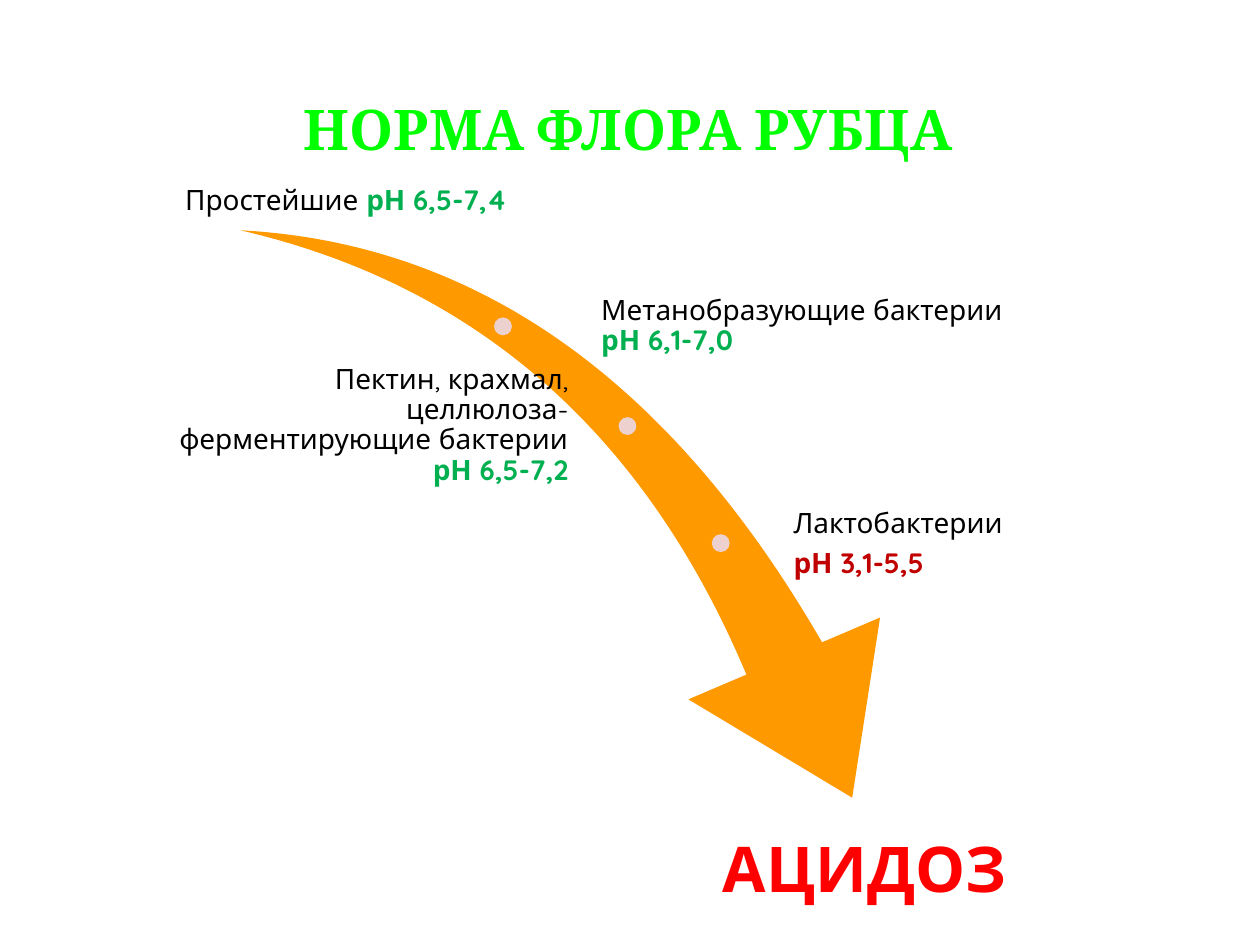
import pptx
import pptx.util
import pptx.dml.color
import pptx.enum.shapes
import pptx.enum.text

Cm = pptx.util.Cm
Pt = pptx.util.Pt
RGBColor = pptx.dml.color.RGBColor
SHAPE = pptx.enum.shapes.MSO_SHAPE
ALIGN = pptx.enum.text.PP_ALIGN
ANCHOR = pptx.enum.text.MSO_ANCHOR

LIME = RGBColor(0x00, 0xFF, 0x00)
ORANGE = RGBColor(0xFF, 0x99, 0x00)
PINK = RGBColor(0xED, 0xD1, 0xCF)
BLACK = RGBColor(0x00, 0x00, 0x00)
GREEN = RGBColor(0x00, 0xB0, 0x50)
DARK_RED = RGBColor(0xC0, 0x00, 0x00)
RED = RGBColor(0xFF, 0x00, 0x00)


class SlideBuilder:
    title_font = "Cambria"
    body_font = "Quicksand"
    label_size = 16
    inset = Cm(0.05)

    def __init__(self, presentation):
        self.slide = presentation.slides.add_slide(presentation.slide_layouts[5])

    def format_run(self, run, font, size, color, bold):
        run.font.name = font
        run.font.size = Pt(size)
        run.font.color.rgb = color
        run.font.bold = bold

    def title(self, text, left, top, width, height):
        heading = self.slide.shapes.title
        heading.left, heading.top = Cm(left), Cm(top)
        heading.width, heading.height = Cm(width), Cm(height)
        frame = heading.text_frame
        frame.text = text
        frame.vertical_anchor = ANCHOR.MIDDLE
        frame.paragraphs[0].alignment = ALIGN.CENTER
        self.format_run(frame.paragraphs[0].runs[0], self.title_font, 32, LIME, True)

    def shape(self, kind, left, top, width, height, color):
        figure = self.slide.shapes.add_shape(
            kind, Cm(left), Cm(top), Cm(width), Cm(height))
        figure.shadow.inherit = False
        figure.fill.solid()
        figure.fill.fore_color.rgb = color
        figure.line.fill.background()
        return figure

    def label(self, box, paragraphs, align=ALIGN.LEFT, anchor=ANCHOR.MIDDLE,
              size=label_size):
        """Add a text box; each paragraph is a list of (text, color, bold)."""
        frame = self.slide.shapes.add_textbox(*map(Cm, box)).text_frame
        frame.word_wrap = True
        frame.vertical_anchor = anchor
        frame.margin_left = frame.margin_right = self.inset
        frame.margin_top = frame.margin_bottom = self.inset
        for index, parts in enumerate(paragraphs):
            paragraph = frame.add_paragraph() if index else frame.paragraphs[0]
            paragraph.alignment = align
            paragraph.line_spacing = 0.9
            paragraph.space_after = Pt(round(0.35 * size, 1))
            for text, color, bold in parts:
                run = paragraph.add_run()
                run.text = text
                self.format_run(run, self.body_font, size, color, bold)


def main():
    presentation = pptx.Presentation()
    presentation.slide_width = Cm(25.4)
    presentation.slide_height = Cm(19.05)
    builder = SlideBuilder(presentation)

    arrow = builder.shape(SHAPE.SWOOSH_ARROW, 4.52, 5.08, 14.5, 10.11, ORANGE)
    arrow.rotation = 73.3
    arrow.adjustments[0] = 0.163
    arrow.adjustments[1] = 0.314
    for left, top in [(9.96, 6.4), (12.47, 8.41), (14.35, 10.77)]:
        builder.shape(SHAPE.OVAL, left, top, 0.36, 0.36, PINK)

    label_height = 2.69
    builder.label((3.56, 1.73, 6.83, label_height),
                  [[("Простейшие ", BLACK, False), ("рН 6,5-7,4", GREEN, True)]],
                  ALIGN.CENTER, ANCHOR.BOTTOM)
    builder.label((12.07, 5.23, 8.64, label_height),
                  [[("Метанобразующие бактерии ", BLACK, False),
                    ("рН 6,1-7,0", GREEN, True)]])
    builder.label((3.56, 7.24, 7.95, label_height),
                  [[("Пектин, крахмал, целлюлоза-ферментирующие бактерии ", BLACK, False),
                    ("рН 6,5-7,2", GREEN, True)]],
                  ALIGN.RIGHT)
    builder.label((15.95, 9.63, 6.1, label_height),
                  [[("Лактобактерии", BLACK, False)],
                   [("рН 3,1-5,5", DARK_RED, True)]])
    builder.label((12.8, 16.84, 9.25, 1.7), [[("АЦИДОЗ", RED, True)]],
                  ALIGN.CENTER, ANCHOR.TOP, 36)

    builder.title("НОРМА ФЛОРА РУБЦА", 1.19, 1.14, 22.94, 2.9)
    presentation.save("out.pptx")


if __name__ == "__main__":
    main()
